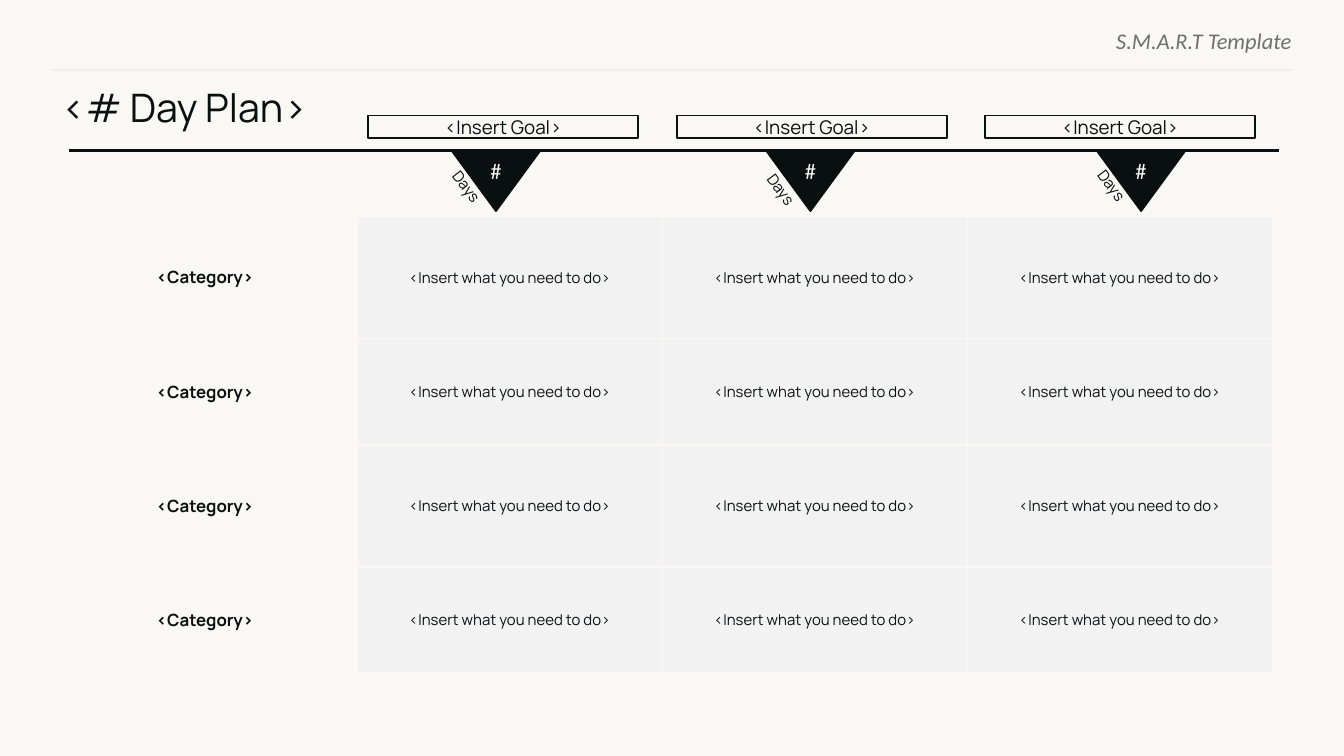
from lxml import etree
from pptx import Presentation
from pptx.dml.color import RGBColor
from pptx.enum.shapes import MSO_CONNECTOR, MSO_SHAPE
from pptx.enum.text import MSO_ANCHOR, PP_ALIGN
from pptx.oxml.ns import qn
from pptx.util import Inches, Pt

STRAIGHT = MSO_CONNECTOR.STRAIGHT
RECTANGLE, TRIANGLE = MSO_SHAPE.RECTANGLE, MSO_SHAPE.ISOSCELES_TRIANGLE
TOP, MIDDLE = MSO_ANCHOR.TOP, MSO_ANCHOR.MIDDLE
LEFT, CENTER, RIGHT = PP_ALIGN.LEFT, PP_ALIGN.CENTER, PP_ALIGN.RIGHT

PAPER = RGBColor(0xF9, 0xF8, 0xF5)
INK = RGBColor(0x09, 0x10, 0x0F)
GRAY = RGBColor(0x6C, 0x70, 0x6F)
RULE = RGBColor(0xEF, 0xEF, 0xEF)
CELL = RGBColor(0xF2, 0xF2, 0xF2)

HEADER = "S.M.A.R.T Template"
TITLE = "<# Day Plan>"
CATEGORIES = ["<Category>"] * 4
TASKS = [["<Insert what you need to do>"] * 3 for _ in CATEGORIES]
# goal, number, unit, marker centre, unit label top, unit label angle
MILESTONES = [
    ("<Insert Goal>", "#", "Days", 3.69, 1.27, 52),
    ("<Insert Goal>", "#", "Days", 6.03, 1.29, 53.5),
    ("<Insert Goal>", "#", "Days", 8.49, 1.26, 53.6),
]

SLIDE_WIDTH = 10
SLIDE_HEIGHT = SLIDE_WIDTH * 9 / 16
MARGIN = 0.39
TIMELINE_Y = 1.12
TABLE_TOP = 1.61
COLUMN_WIDTH = 2.27
ROW_HEIGHTS = [0.91, 0.79, 0.91, 0.79]
GOAL_FIRST, GOAL_LAST, GOAL_WIDTH = 2.74, 7.33, 2.01
GOAL_STEP = (GOAL_LAST - GOAL_FIRST) / (len(MILESTONES) - 1)
MARKER_WIDTH, MARKER_HEIGHT = 0.66, 0.45
NUMBER_WIDTH = 0.33
UNIT_WIDTH, UNIT_SHIFT = 0.51, 0.22


def inches(*lengths):
    return [Inches(length) for length in lengths]


def write(frame, text, size, color=INK, font="Manrope", align=CENTER,
          anchor=TOP, insets=(0, 0), bold=False, italic=False):
    frame.word_wrap = True
    frame.vertical_anchor = anchor
    frame.margin_left = frame.margin_right = Inches(insets[0])
    frame.margin_top = frame.margin_bottom = Inches(insets[1])
    frame.text = text
    paragraph = frame.paragraphs[0]
    paragraph.alignment = align
    style = paragraph.runs[0].font
    style.name, style.size = font, Pt(size)
    style.bold, style.italic = bold, italic
    style.color.rgb = color


def add_text(slide, box, text, size, **style):
    shape = slide.shapes.add_textbox(*inches(*box))
    write(shape.text_frame, text, size, **style)
    return shape


def add_line(slide, start_x, end_x, y, color, width):
    line = slide.shapes.add_connector(STRAIGHT, *inches(start_x, y, end_x, y))
    line.line.color.rgb = color
    line.line.width = Pt(width)
    etree.SubElement(line._element.spPr, qn("a:effectLst"))


def add_outlined_shape(slide, kind, box, fill):
    shape = slide.shapes.add_shape(kind, *inches(*box))
    shape.shadow.inherit = False
    shape.fill.solid()
    shape.fill.fore_color.rgb = fill
    shape.line.color.rgb = INK
    shape.line.width = Pt(1)
    return shape


def set_borders(cell, color):
    properties = cell._tc.get_or_add_tcPr()
    for index, side in enumerate(("lnL", "lnR", "lnT", "lnB")):
        border = etree.Element(qn(f"a:{side}"), w=str(Pt(1)))
        fill = etree.SubElement(border, qn("a:solidFill"))
        etree.SubElement(fill, qn("a:srgbClr"), val=str(color))
        properties.insert(index, border)


def add_plan_table(slide):
    columns = len(MILESTONES) + 1
    box = inches(MARGIN, TABLE_TOP, columns * COLUMN_WIDTH, sum(ROW_HEIGHTS))
    table = slide.shapes.add_table(len(CATEGORIES), columns, *box).table
    table.first_row = table.horz_banding = False
    for column in table.columns:
        column.width = Inches(COLUMN_WIDTH)
    for r, (category, tasks) in enumerate(zip(CATEGORIES, TASKS)):
        table.rows[r].height = Inches(ROW_HEIGHTS[r])
        for c, text in enumerate([category, *tasks]):
            cell = table.cell(r, c)
            is_category = c == 0
            write(cell.text_frame, text, 9 if is_category else 8, bold=is_category)
            cell.vertical_anchor = MIDDLE
            cell.margin_left = cell.margin_right = Inches(0.04)
            cell.margin_top = cell.margin_bottom = Inches(0.02)
            if is_category:
                cell.fill.background()
            else:
                cell.fill.solid()
                cell.fill.fore_color.rgb = CELL
            set_borders(cell, PAPER)


def add_milestone(slide, index, goal, number, unit, center, unit_top, angle):
    goal_box = (GOAL_FIRST + index * GOAL_STEP, 0.86, GOAL_WIDTH, 0.17)
    goal_shape = add_outlined_shape(slide, RECTANGLE, goal_box, PAPER)
    write(goal_shape.text_frame, goal, 10.1, anchor=MIDDLE, insets=(0.1, 0.05))

    marker_box = (center - MARKER_WIDTH / 2, TIMELINE_Y, MARKER_WIDTH, MARKER_HEIGHT)
    marker = add_outlined_shape(slide, TRIANGLE, marker_box, INK)
    marker.rotation = 180

    unit_box = (center - UNIT_SHIFT - UNIT_WIDTH / 2, unit_top, UNIT_WIDTH, 0.24)
    label = add_text(slide, unit_box, unit, 8.2, insets=(0.1, 0.05))
    label.rotation = angle

    number_box = (center - NUMBER_WIDTH / 2, 1.17, NUMBER_WIDTH, 0.2)
    add_text(slide, number_box, number, 12, color=PAPER, font="Calibri")


def main():
    presentation = Presentation()
    presentation.slide_width, presentation.slide_height = inches(SLIDE_WIDTH, SLIDE_HEIGHT)
    slide = presentation.slides.add_slide(presentation.slide_layouts[6])
    slide.background.fill.solid()
    slide.background.fill.fore_color.rgb = PAPER

    add_line(slide, MARGIN, SLIDE_WIDTH - MARGIN, 0.52, RULE, 0.75)
    add_text(slide, (5.76, 0.2, 3.85, 0.18), HEADER, 12, color=GRAY,
             font="Calibri", align=RIGHT, italic=True)
    add_plan_table(slide)
    title = add_text(slide, (MARGIN, 0.27, 2.08, 1.09), TITLE, 21,
                     align=LEFT, anchor=MIDDLE, insets=(0.07, 0.04))
    title.text_frame.paragraphs[0].line_spacing = 0.9
    add_line(slide, 0.51, 9.52, TIMELINE_Y, INK, 1.5)
    for index, milestone in enumerate(MILESTONES):
        add_milestone(slide, index, *milestone)

    presentation.save("out.pptx")


if __name__ == "__main__":
    main()
